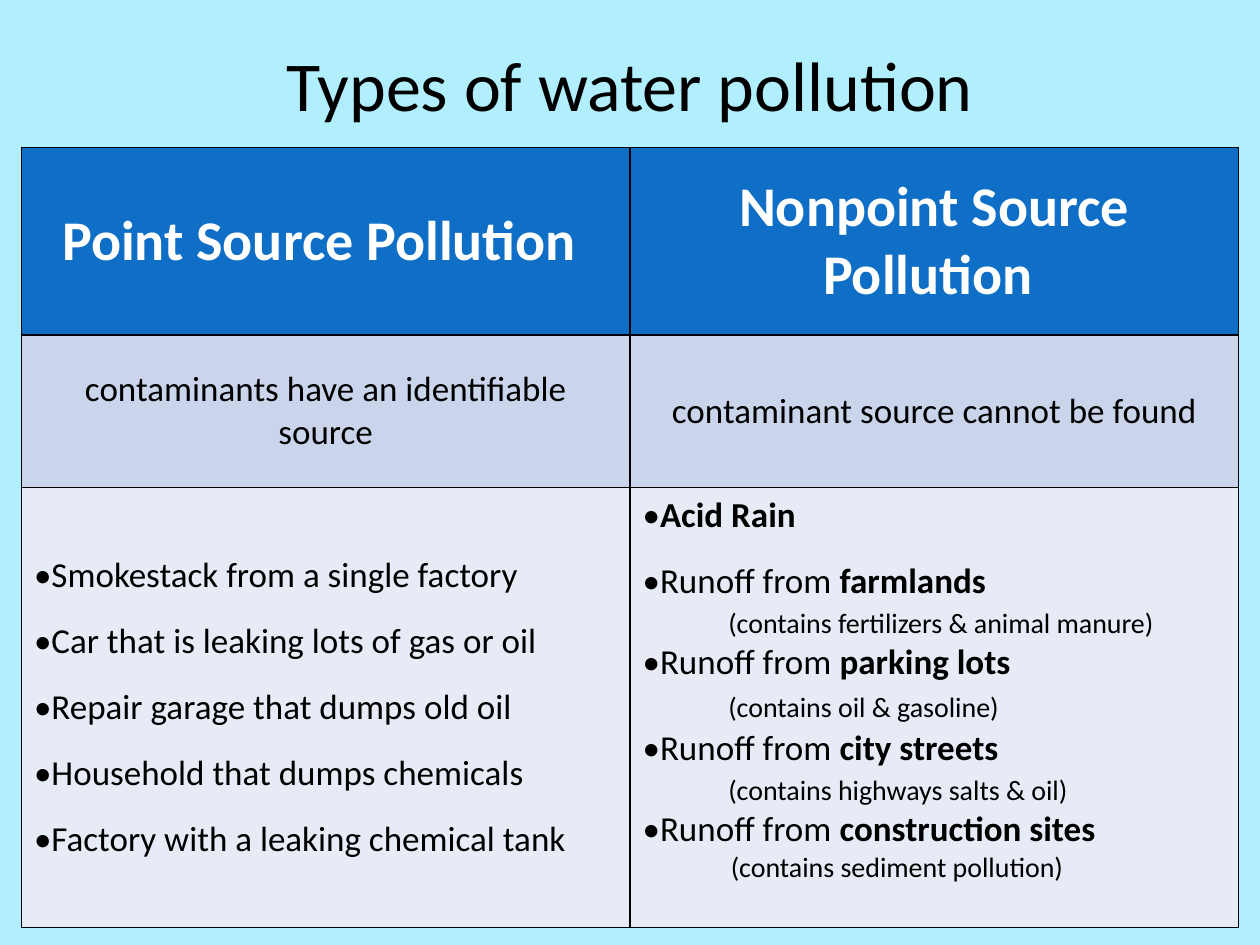
from dataclasses import dataclass

from lxml.etree import SubElement
from pptx import Presentation
from pptx.dml.color import RGBColor
from pptx.enum.text import MSO_ANCHOR, PP_ALIGN
from pptx.oxml.ns import qn
from pptx.util import Inches, Pt

FONT = "Calibri"
BLACK, WHITE = "000000", "FFFFFF"
BACKGROUND = "B1EEFE"
ROW_FILLS = ["0F6FC6", "CAD4EA", "E6EBF5"]
ROW_HEIGHTS = [1.49, 1.21, 3.49]
COLUMN_WIDTH = 4.83
ITEM_GAP = 13.2  # points between list items


@dataclass
class Run:
    text: str
    size: float = 20
    bold: bool = False
    color: str = BLACK


@dataclass
class Line:
    runs: list[Run]
    bullet: bool = False
    centered: bool = False
    indent: float = 0
    space_before: float = 0


def color_of(hex_color: str) -> RGBColor:
    return RGBColor.from_string(hex_color)


def heading(text: str) -> list[Line]:
    return [Line([Run(text, 32, True, WHITE)], centered=True)]


def definition(text: str) -> list[Line]:
    return [Line([Run(text)], centered=True)]


def runoff(place: str, note: str, gap: float, note_gap: float, indent: float = 0.68) -> list[Line]:
    return [
        Line([Run("Runoff from "), Run(place, bold=True)], bullet=True, space_before=gap),
        Line([Run(note, 16)], indent=indent, space_before=note_gap),
    ]


def write_line(paragraph, line: Line) -> None:
    paragraph.alignment = PP_ALIGN.CENTER if line.centered else PP_ALIGN.LEFT
    paragraph.space_before = Pt(line.space_before)
    for part in line.runs:
        run = paragraph.add_run()
        run.text = part.text
        run.font.name = FONT
        run.font.size = Pt(part.size)
        run.font.bold = part.bold
        run.font.color.rgb = color_of(part.color)
    properties = paragraph._p.get_or_add_pPr()
    properties.set("marL", str(Inches(line.indent)))
    properties.set("indent", "0")
    if line.bullet:
        bullet_color = SubElement(properties, qn("a:buClr"))
        SubElement(bullet_color, qn("a:srgbClr"), val=BLACK)
        SubElement(properties, qn("a:buFont"), typeface=FONT)
        SubElement(properties, qn("a:buChar"), char="•")


def write_lines(text_frame, lines: list[Line]) -> None:
    for index, line in enumerate(lines):
        write_line(text_frame.add_paragraph() if index else text_frame.paragraphs[0], line)


def add_borders(cell) -> None:
    properties = cell._tc.get_or_add_tcPr()
    for side in ("a:lnL", "a:lnR", "a:lnT", "a:lnB"):
        border = SubElement(properties, qn(side), w=str(Pt(1)))
        fill = SubElement(border, qn("a:solidFill"))
        SubElement(fill, qn("a:srgbClr"), val=BLACK)


def fill_cell(cell, lines: list[Line], fill: str) -> None:
    cell.vertical_anchor = MSO_ANCHOR.MIDDLE
    add_borders(cell)
    cell.fill.solid()
    cell.fill.fore_color.rgb = color_of(fill)
    write_lines(cell.text_frame, lines)


# Table content
POINT_EXAMPLES = [
    Line([Run(text)], bullet=True, space_before=ITEM_GAP if index else 0)
    for index, text in enumerate([
        "Smokestack from a single factory",
        "Car that is leaking lots of gas or oil",
        "Repair garage that dumps old oil",
        "Household that dumps chemicals",
        "Factory with a leaking chemical tank",
    ])
]
NONPOINT_EXAMPLES = [
    Line([Run("Acid Rain", bold=True)], bullet=True),
    *runoff("farmlands", "(contains fertilizers & animal manure)", ITEM_GAP, 2),
    *runoff("parking lots", "(contains oil & gasoline)", 0.4, 4),
    *runoff("city streets", "(contains highways salts & oil)", 0.9, 2),
    *runoff("construction sites", "(contains sediment pollution)", 0.4, 0, 0.7),
]
ROWS = [
    [heading("Point Source Pollution "), heading("Nonpoint Source Pollution ")],
    [definition("contaminants have an identifiable source"),
     definition("contaminant source cannot be found")],
    [POINT_EXAMPLES, NONPOINT_EXAMPLES],
]


def main() -> None:
    presentation = Presentation()
    presentation.slide_width, presentation.slide_height = Inches(10), Inches(7.5)
    slide = presentation.slides.add_slide(presentation.slide_layouts[5])
    slide.background.fill.solid()
    slide.background.fill.fore_color.rgb = color_of(BACKGROUND)

    # Title
    title = slide.shapes.title
    title.left, title.top = Inches(0.5), Inches(0.25)
    title.width, title.height = Inches(9), Inches(0.83)
    title.text_frame.vertical_anchor = MSO_ANCHOR.MIDDLE
    write_lines(title.text_frame, [Line([Run("Types of water pollution", 40)], centered=True)])

    # Comparison table
    table = slide.shapes.add_table(
        len(ROWS), 2, Inches(0.17), Inches(1.17),
        Inches(2 * COLUMN_WIDTH), Inches(sum(ROW_HEIGHTS)),
    ).table
    table.horz_banding = False
    for column in table.columns:
        column.width = Inches(COLUMN_WIDTH)
    for row, height, contents, fill in zip(table.rows, ROW_HEIGHTS, ROWS, ROW_FILLS):
        row.height = Inches(height)
        for cell, lines in zip(row.cells, contents):
            fill_cell(cell, lines, fill)
    # The long list sits slightly above the middle
    table.cell(2, 1).margin_bottom = Inches(0.33)

    presentation.save("out.pptx")


if __name__ == "__main__":
    main()
